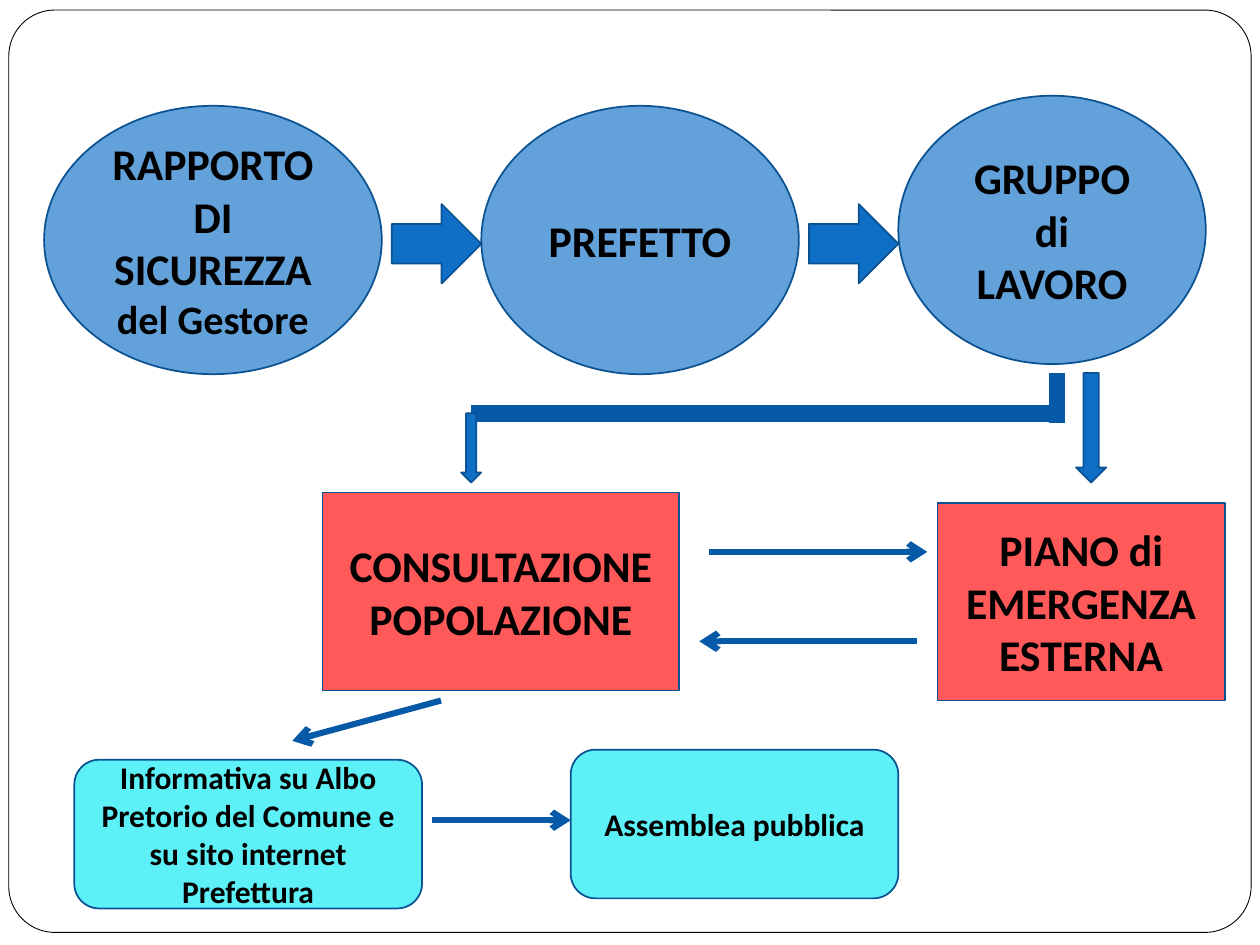
from lxml.etree import SubElement
from pptx import Presentation
from pptx.dml.color import RGBColor
from pptx.enum.shapes import MSO_CONNECTOR as CONNECTOR, MSO_SHAPE as SHAPE
from pptx.enum.text import MSO_ANCHOR as ANCHOR, PP_ALIGN as ALIGN
from pptx.oxml.ns import qn
from pptx.util import Inches, Pt

BLUE, OUTLINE, LINE = "0F6FC6", "0B5292", "0559A6"
RED, CYAN = "FF0000", "5EF0F7"
color = RGBColor.from_string


def add_block(kind, box, fill, text="", size=25, opacity=100, outline=OUTLINE, width=1):
    shape = slide.shapes.add_shape(kind, *[Inches(value) for value in box])
    shape.shadow.inherit = False
    shape.fill.solid()
    shape.fill.fore_color.rgb = color(fill)
    if opacity < 100:
        fill_color = shape.fill._xPr.find(qn("a:solidFill"))[0]
        SubElement(fill_color, qn("a:alpha")).set("val", str(opacity * 1000))
    shape.line.color.rgb = color(outline)
    shape.line.width = Pt(width)
    shape.text_frame.text = text
    shape.text_frame.word_wrap = True
    shape.text_frame.vertical_anchor = ANCHOR.MIDDLE
    for paragraph in shape.text_frame.paragraphs:
        paragraph.alignment = ALIGN.CENTER
        for run in paragraph.runs:
            run.font.name = "Calibri"
            run.font.size = Pt(size)
            run.font.bold = True
            run.font.color.rgb = color("000000")
    return shape


def add_line(start, end, width=3.5, arrow=True):
    points = [Inches(value) for value in start + end]
    connector = slide.shapes.add_connector(CONNECTOR.STRAIGHT, *points)
    connector.line.color.rgb = color(LINE)
    connector.line.width = Pt(width)
    if arrow:
        SubElement(connector.line._get_or_add_ln(), qn("a:tailEnd")).set("type", "arrow")
    SubElement(connector._element.spPr, qn("a:effectLst"))


presentation = Presentation()
presentation.slide_width = Inches(10)
presentation.slide_height = Inches(7.5)
slide = presentation.slides.add_slide(presentation.slide_layouts[6])

frame = add_block(SHAPE.ROUNDED_RECTANGLE, (0.07, 0.08, 9.86, 7.32), "FFFFFF",
                  outline="000000", width=0.5)
frame.adjustments[0] = 0.05

report = add_block(SHAPE.OVAL, (0.35, 0.84, 2.68, 2.13), BLUE,
                   "RAPPORTO DI SICUREZZA ", opacity=65)
operator = report.text_frame.paragraphs[0].add_run()
operator.text = "del Gestore"
operator.font.name = "Calibri"
operator.font.size = Pt(23)
operator.font.bold = True
operator.font.color.rgb = color("000000")

add_block(SHAPE.OVAL, (3.82, 0.84, 2.52, 2.13), BLUE, "PREFETTO", opacity=65)
add_block(SHAPE.OVAL, (7.13, 0.76, 2.44, 2.13), BLUE, "GRUPPO di LAVORO", opacity=65)
for left in (3.11, 6.42):
    add_block(SHAPE.RIGHT_ARROW, (left, 1.62, 0.71, 0.63), BLUE)

add_line((8.39, 2.96), (8.39, 3.36), 9.5, arrow=False)
add_line((8.39, 3.28), (3.74, 3.28), 9.5, arrow=False)
add_block(SHAPE.DOWN_ARROW, (3.66, 3.28, 0.16, 0.55), BLUE)
add_block(SHAPE.DOWN_ARROW, (8.54, 2.96, 0.24, 0.87), BLUE)

add_block(SHAPE.RECTANGLE, (2.56, 3.91, 2.83, 1.57), RED,
          "CONSULTAZIONE POPOLAZIONE", opacity=65)
add_block(SHAPE.RECTANGLE, (7.44, 3.99, 2.28, 1.57), RED,
          "PIANO di EMERGENZA\nESTERNA", opacity=65)
add_block(SHAPE.ROUNDED_RECTANGLE, (0.59, 6.03, 2.76, 1.18), CYAN,
          "Informativa su Albo Pretorio del Comune e su sito internet Prefettura", size=18)
add_block(SHAPE.ROUNDED_RECTANGLE, (4.53, 5.95, 2.6, 1.18), CYAN,
          "Assemblea pubblica", size=18)

for start, end in [
    ((5.63, 4.38), (7.36, 4.38)),
    ((7.28, 5.09), (5.55, 5.09)),
    ((3.5, 5.56), (2.32, 5.88)),
    ((3.43, 6.51), (4.53, 6.51)),
]:
    add_line(start, end)

presentation.save("out.pptx")
